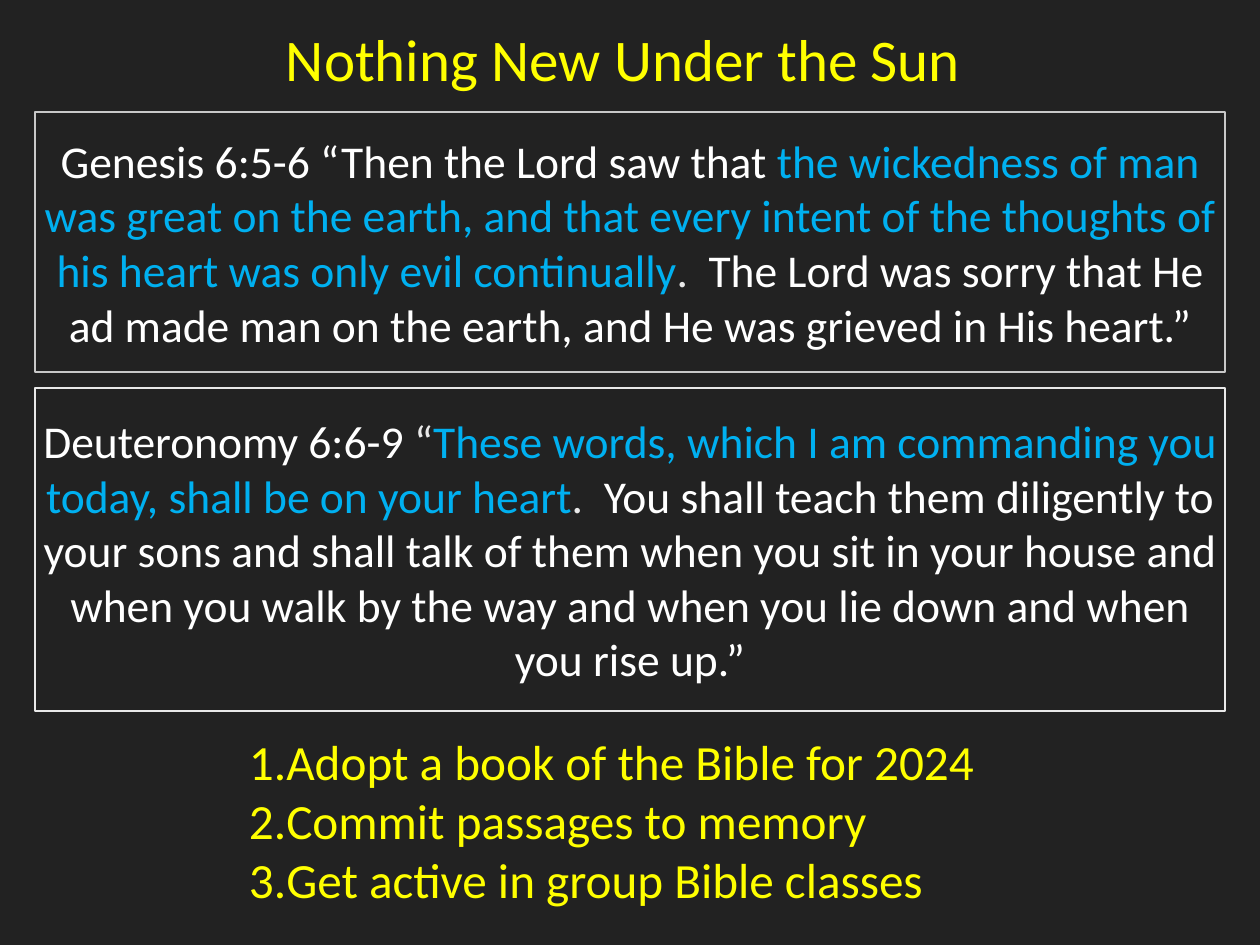
from pptx import Presentation
from pptx import util as u
from pptx.dml.color import RGBColor
from pptx.enum import shapes, text
from pptx.oxml.ns import qn

COLORS = {
    "background": "222222",
    "yellow": "FFFF00",
    "white": "FFFFFF",
    "blue": "00B0F0",
    "pale": "E9E9E9",
    "grey": "C8C8C8",
}
TITLE = "Nothing New Under the Sun"
GENESIS = [
    ("Genesis 6:5-6 “Then the Lord saw that ", "white"),
    ("the wickedness of man was great on the earth, and that every intent "
     "of the thoughts of his heart was only evil continually", "blue"),
    (".  ", "pale"),
    ("The Lord was sorry that He ad made man on the earth, "
     "and He was grieved in His heart.”", "white"),
]
DEUTERONOMY = [
    ("Deuteronomy 6:6-9 ", "white"),
    ("“", "pale"),
    ("These words, which I am commanding you today, "
     "shall be on your heart", "blue"),
    (".  ", "pale"),
    ("You shall teach them diligently to your sons and shall talk of them "
     "when you sit in your house and when you walk by the way "
     "and when you lie down and when you rise up.”", "white"),
]
VERSES = [
    (GENESIS, 112, 260, "grey"),
    (DEUTERONOMY, 388, 323, "pale"),
]
STEPS = [
    "Adopt a book of the Bible for 2024",
    "Commit passages to memory",
    "Get active in group Bible classes",
]
WIDTH, HEIGHT = 1260, 945
MARGIN, INSET = 35, 5
CONTENT_WIDTH = WIDTH - 2 * MARGIN
SCALE = 10320


def px(length):
    return u.Emu(length * SCALE)


def color(name):
    return RGBColor.from_string(COLORS[name])


def place(shape, left, top, width, height):
    shape.left, shape.top = px(left), px(top)
    shape.width, shape.height = px(width), px(height)


def write(shape, paragraphs, size, align, numbered=False):
    frame = shape.text_frame
    frame.word_wrap = True
    frame.auto_size = text.MSO_AUTO_SIZE.NONE
    frame.vertical_anchor = text.MSO_ANCHOR.MIDDLE
    frame.margin_left = frame.margin_right = px(INSET)
    frame.margin_top = frame.margin_bottom = px(INSET)
    for index, runs in enumerate(paragraphs):
        paragraph = frame.add_paragraph() if index else frame.paragraphs[0]
        paragraph.alignment = align
        paragraph.space_before = u.Pt(0)
        if numbered:
            properties = paragraph._p.get_or_add_pPr()
            properties.set("marL", "0")
            properties.set("indent", "0")
            bullet = properties.makeelement(
                qn("a:buAutoNum"), {"type": "arabicPeriod"})
            properties.append(bullet)
        for words, name in runs:
            run = paragraph.add_run()
            run.text = words
            run.font.name = "Calibri"
            run.font.size = u.Pt(size)
            run.font.color.rgb = color(name)


def main():
    presentation = Presentation()
    presentation.slide_width = px(WIDTH)
    presentation.slide_height = px(HEIGHT)
    slide = presentation.slides.add_slide(presentation.slide_layouts[5])
    slide.background.fill.solid()
    slide.background.fill.fore_color.rgb = color("background")

    title = slide.shapes.title
    place(title, MARGIN, 2, CONTENT_WIDTH, 111)
    write(title, [[(TITLE + " ", "yellow")]], 48, text.PP_ALIGN.CENTER)

    for runs, top, height, outline in VERSES:
        verse = slide.shapes.add_shape(
            shapes.MSO_SHAPE.RECTANGLE,
            px(MARGIN), px(top), px(CONTENT_WIDTH), px(height))
        verse.shadow.inherit = False
        verse.fill.background()
        verse.line.color.rgb = color(outline)
        verse.line.width = u.Pt(1)
        write(verse, [runs], 37, text.PP_ALIGN.CENTER)

    steps = slide.shapes.add_textbox(px(244), px(725), px(758), px(189))
    write(steps, [[(step, "yellow")] for step in STEPS], 40,
          text.PP_ALIGN.LEFT, numbered=True)

    presentation.save("out.pptx")


if __name__ == "__main__":
    main()
